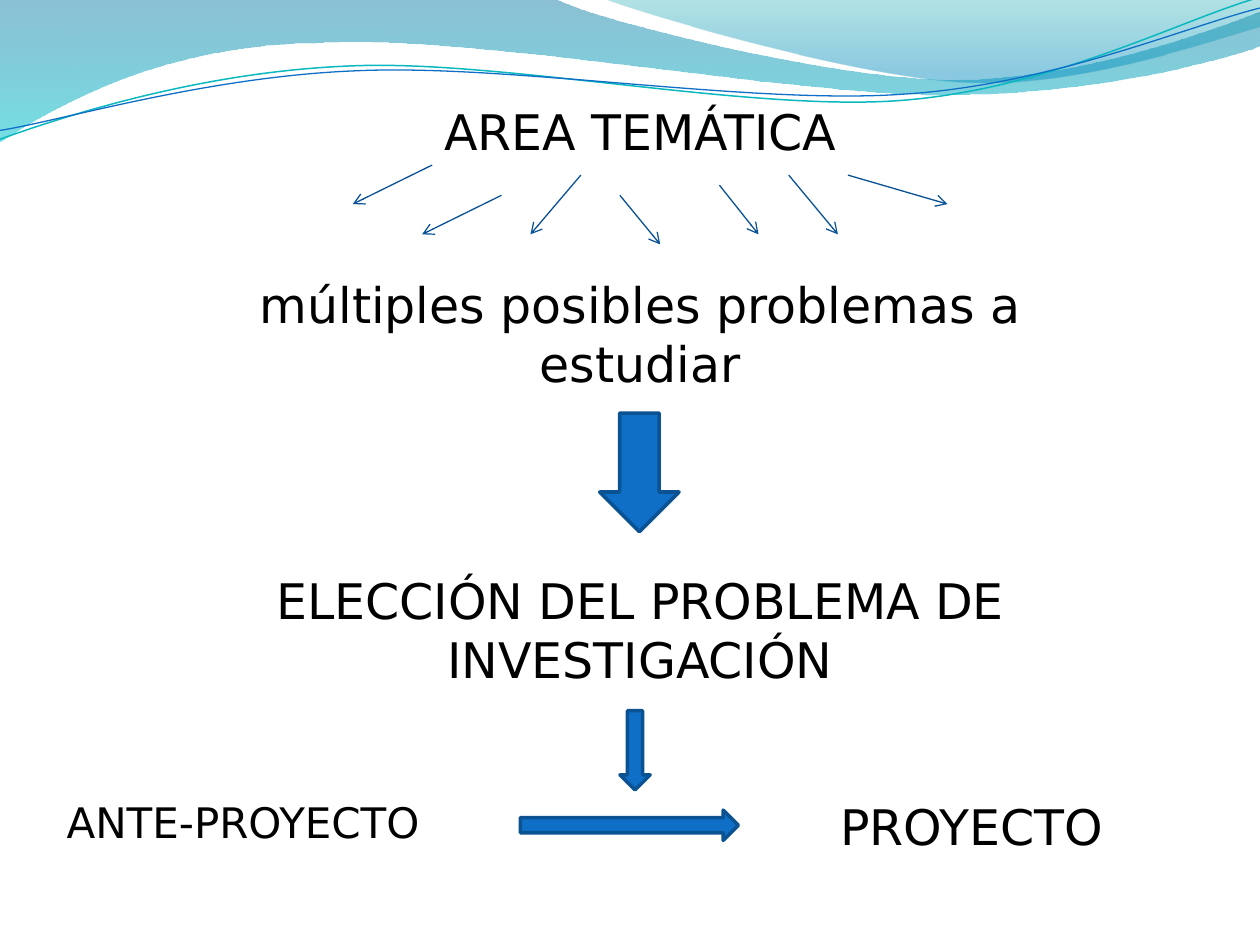
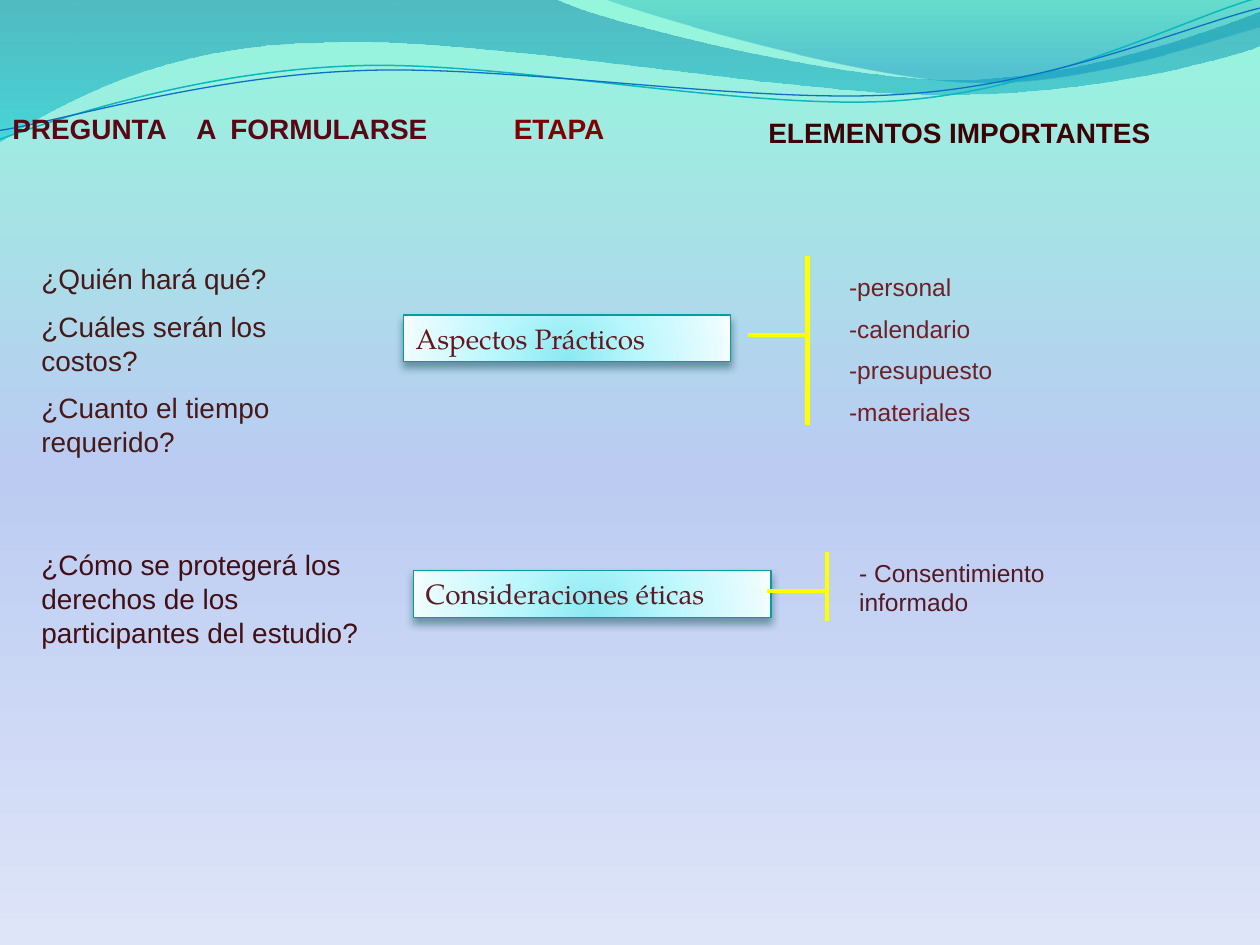
from dataclasses import dataclass

from pptx import Presentation, util as u
from pptx.dml.color import RGBColor
from pptx.enum import shapes, text
from pptx.oxml import parse_xml
from pptx.oxml.ns import nsdecls

Inches, Pt = u.Inches, u.Pt


@dataclass(frozen=True)
class Theme:
    """Fonts, type sizes, colours and gradients of the deck."""
    flow_font: str = "DejaVu Sans"
    body_font: str = "Arial"
    label_font: str = "TeX Gyre Pagella"
    large: int = 28
    medium: int = 24
    body: int = 16
    small: int = 14
    black: str = "000000"
    blue: str = "0F6FC6"
    teal: str = "0AB8BF"
    block_edge: str = "0B5292"
    thin_arrow: str = "095295"
    bracket: str = "FFFF00"
    label_edge: str = "069CA3"
    label_shadow: str = "024B4E"
    sky: tuple = ((0, "94F7DC", 100), (50, "BBCBF2", 100), (100, "DEE5F8", 100))
    glow: tuple = ((0, "8BE9F1", 100), (43, "B9F7FD", 100),
                   (93, "EAFCFE", 100), (100, "F8FEFF", 100))
    left_wave: tuple = ((0, "0074A1", 45), (100, "00C6CF", 55))
    right_wave: tuple = ((0, "00A1A9", 30), (80, "008BBF", 45))


THEME = Theme()
CURVE_TILT = -2.7
DOWNWARD = '<a:lin ang="5400000" scaled="0"/>'
FROM_BELOW = ('<a:path path="circle"><a:fillToRect l="50000" t="130000" '
              'r="50000" b="-30000"/></a:path>')

LEFT_WAVE = [
    [(0, -0.01)], [(4.4, -0.01)],
    [(4.76, 0.17), (6.64, 0.63), (7.58, 0.63)],
    [(8.53, 0.63), (9.58, 0.26), (10, 0.09)], [(10.01, 0.36)],
    [(9.83, 0.44), (8.7, 0.76), (7.46, 0.75)],
    [(6.22, 0.75), (3.82, 0.28), (2.57, 0.34)],
    [(1.29, 0.35), (0.46, 0.83), (-0.01, 1.13)]]
RIGHT_WAVE = [
    [(4.79, -0.01)],
    [(5.09, 0.11), (6.82, 0.62), (7.69, 0.65)],
    [(8.56, 0.69), (9.61, 0.32), (10, 0.21)], [(10, 0)]]
TEAL_CURVE = [
    [(-0.02, 0.87)],
    [(0.47, 0.72), (1.58, 0.41), (2.78, 0.42)],
    [(3.96, 0.42), (5.91, 0.93), (7.12, 0.9)],
    [(8.32, 0.87), (9.4, 0.36), (10, 0.22)]]
BLUE_CURVE = [
    [(-0.02, 0.8)],
    [(0.46, 0.75), (1.64, 0.45), (2.83, 0.46)],
    [(4.03, 0.46), (5.96, 0.88), (7.16, 0.85)],
    [(8.35, 0.83), (9.42, 0.42), (10.02, 0.3)]]


def rgb(value):
    """Turn a hex string into a colour."""
    return RGBColor.from_string(value)


def apply_gradient(holder, stops, direction):
    """Replace the first solid fill inside an element by a gradient."""
    marks = "".join(
        f'<a:gs pos="{place * 1000}"><a:srgbClr val="{colour}">'
        f'<a:alpha val="{opacity * 1000}"/></a:srgbClr></a:gs>'
        for place, colour, opacity in stops)
    gradient = parse_xml(f'<a:gradFill {nsdecls("a")} rotWithShape="1">'
                         f'<a:gsLst>{marks}</a:gsLst>{direction}</a:gradFill>')
    solid = holder.xpath(".//a:solidFill")[0]
    solid.getparent().replace(solid, gradient)


def set_line(shape, colour, width):
    """Give a shape or connector a plain outline."""
    shape.line.color.rgb = rgb(colour)
    shape.line.width = Pt(width)


def add_outline(page, segments, closed):
    """Draw a freeform whose three-point segments are cubic curves."""
    points = [(Inches(x), Inches(y)) for segment in segments for x, y in segment]
    builder = page.shapes.build_freeform(*points[0])
    builder.add_line_segments(points[1:], close=closed)
    outline = builder.convert_to_shape()
    outline.shadow.inherit = False
    corners = iter(outline.element.xpath(".//a:lnTo"))
    for segment in segments[1:]:
        first, *others = [next(corners) for _ in segment]
        if others:
            curve = parse_xml(f'<a:cubicBezTo {nsdecls("a")}/>')
            first.getparent().replace(first, curve)
            curve.append(first[0])
            for corner in others:
                curve.append(corner[0])
                corner.getparent().remove(corner)
    return outline


def add_waves(deck, page):
    """Draw the wave band and hand it to the slide master."""
    waves = []
    for segments, stops in ((LEFT_WAVE, THEME.left_wave),
                            (RIGHT_WAVE, THEME.right_wave)):
        wave = add_outline(page, segments, True)
        wave.fill.solid()
        apply_gradient(wave.element, stops, DOWNWARD)
        wave.line.fill.background()
        waves.append(wave)
    for segments, colour, width in ((TEAL_CURVE, THEME.teal, 0.85),
                                    (BLUE_CURVE, THEME.blue, 0.75)):
        curve = add_outline(page, segments, False)
        curve.rotation = CURVE_TILT
        curve.fill.background()
        set_line(curve, colour, width)
        waves.append(curve)
    tree = deck.slide_master.shapes.element
    for index, wave in enumerate(waves):
        wave.element.xpath("./p:nvSpPr/p:cNvPr")[0].set("id", str(100 + index))
        tree.insert(2 + index, wave.element)


def write(box, lines, font, size, colour, bold=False, align=text.PP_ALIGN.LEFT, gaps=()):
    """Fill a shape with equally styled paragraphs and given gaps above them."""
    frame = box.text_frame
    frame.word_wrap = True
    frame.auto_size = text.MSO_AUTO_SIZE.SHAPE_TO_FIT_TEXT
    frame.vertical_anchor = text.MSO_ANCHOR.TOP
    frame.text = "\n".join(lines)
    for para in frame.paragraphs:
        para.alignment = align
        for span in para.runs:
            span.font.name = font
            span.font.size = Pt(size)
            span.font.bold = bold
            span.font.color.rgb = rgb(colour)
    for para, gap in zip(frame.paragraphs, gaps):
        para.space_before = Pt(gap)


def add_text(page, area, lines, font, size, colour, **style):
    """Add a wrapped text box."""
    box = page.shapes.add_textbox(*map(Inches, area))
    write(box, lines, font, size, colour, **style)
    return box


def add_rule(page, start, end, colour, width, arrow=False):
    """Add a straight line, with an open arrowhead if asked."""
    rule = page.shapes.add_connector(
        shapes.MSO_CONNECTOR.STRAIGHT, *map(Inches, (*start, *end)))
    set_line(rule, colour, width)
    if arrow:
        rule.element.xpath("./p:spPr/a:ln")[0].append(
            parse_xml(f'<a:tailEnd {nsdecls("a")} type="arrow"/>'))
    rule.element.spPr.append(parse_xml(f'<a:effectLst {nsdecls("a")}/>'))


def add_block_arrow(page, kind, area):
    """Add a filled block arrow."""
    arrow = page.shapes.add_shape(kind, *map(Inches, area))
    arrow.shadow.inherit = False
    arrow.fill.solid()
    arrow.fill.fore_color.rgb = rgb(THEME.blue)
    set_line(arrow, THEME.block_edge, 2)


def add_stage_label(page, area, label, colour):
    """Add a glowing label with a soft shadow."""
    box = page.shapes.add_shape(shapes.MSO_SHAPE.RECTANGLE, *map(Inches, area))
    box.fill.solid()
    apply_gradient(box.element, THEME.glow, FROM_BELOW)
    set_line(box, THEME.label_edge, 0.75)
    box.shadow.inherit = False
    box.element.xpath("./p:spPr/a:effectLst")[0].append(parse_xml(
        f'<a:outerShdw {nsdecls("a")} blurRad="{Pt(4.5)}" dist="{Pt(3)}" '
        f'dir="5400000" rotWithShape="0"><a:srgbClr val="{THEME.label_shadow}">'
        '<a:alpha val="48000"/></a:srgbClr></a:outerShdw>'))
    write(box, [label], THEME.label_font, THEME.body, colour)


def add_bracket(page, left, spine, middle, top, bottom, width):
    """Add a stem that meets an upright spine."""
    add_rule(page, (left, middle), (spine, middle), THEME.bracket, width)
    add_rule(page, (spine, top), (spine, bottom), THEME.bracket, width)


def add_heading(page, area, line, colour, indent=0, tabs=()):
    """Add a bold column heading with an indent and tab stops."""
    box = add_text(page, area, [line], THEME.body_font, THEME.body, colour, bold=True)
    layout = box.element.xpath(".//a:pPr")[0]
    layout.set("marL", str(Inches(indent)))
    if tabs:
        stops = "".join(f'<a:tab pos="{Inches(stop)}" algn="l"/>' for stop in tabs)
        layout.append(parse_xml(f'<a:tabLst {nsdecls("a")}>{stops}</a:tabLst>'))


def build_flow(page):
    """Show the way from the subject area to the project."""
    flow = dict(font=THEME.flow_font, size=THEME.large, colour=THEME.black)
    add_text(page, (1.38, 0.76, 7.4, 4.78),
             ["AREA TEMÁTICA", "múltiples posibles problemas a estudiar",
              "ELECCIÓN DEL PROBLEMA DE INVESTIGACIÓN"],
             align=text.PP_ALIGN.CENTER, gaps=(0, 65, 102), **flow)
    add_text(page, (0.43, 6.27, 3.31, 0.5), ["ANTE-PROYECTO"],
             THEME.flow_font, THEME.medium, THEME.black)

    for start, end in (((4.61, 1.39), (4.21, 1.86)), ((4.92, 1.55), (5.24, 1.94)),
                       ((5.71, 1.47), (6.02, 1.86)), ((6.26, 1.39), (6.65, 1.86)),
                       ((3.43, 1.31), (2.8, 1.62)), ((3.98, 1.55), (3.35, 1.86)),
                       ((6.73, 1.39), (7.52, 1.62))):
        add_rule(page, start, end, THEME.thin_arrow, 0.75, arrow=True)
    down, right = shapes.MSO_SHAPE.DOWN_ARROW, shapes.MSO_SHAPE.RIGHT_ARROW
    add_block_arrow(page, down, (4.76, 3.28, 0.63, 0.94))
    add_block_arrow(page, right, (4.13, 6.43, 1.73, 0.24))
    add_text(page, (6.57, 6.27, 2.76, 0.57), ["PROYECTO"], **flow)
    add_block_arrow(page, down, (4.92, 5.64, 0.24, 0.63))


def add_list(page, area, lines, size, colour):
    """Add paragraphs set half a line apart."""
    add_text(page, area, lines, THEME.body_font, size, colour,
             gaps=[size / 2] * len(lines))


def build_stages(page):
    """Show questions, stages and their key elements."""
    page.background.fill.solid()
    apply_gradient(page.element, THEME.sky, DOWNWARD)
    add_list(page, (0.23, 2.03, 2.8, 1.72),
             ["¿Quién hará qué?", "¿Cuáles serán los costos?",
              "¿Cuanto el tiempo requerido?"], THEME.body, "471919")
    add_heading(page, (0, 0.84, 3.58, 0.37), "PREGUNTA\tA\tFORMULARSE", "5A0614",
                tabs=(1.46, 1.73))
    add_heading(page, (3.43, 0.84, 2.28, 0.37), "ETAPA", "800000", indent=0.55)
    add_heading(page, (5.79, 0.87, 4.21, 0.37), "ELEMENTOS IMPORTANTES", "3B0304",
                indent=0.21)

    add_stage_label(page, (3.2, 2.5, 2.6, 0.37), "Aspectos Prácticos", "63171E")
    add_bracket(page, 5.94, 6.41, 2.66, 2.03, 3.37, 2.5)
    add_list(page, (6.64, 2.11, 2.61, 1.4),
             ["-personal", "-calendario", "-presupuesto", "-materiales"],
             THEME.small, "6E2026")

    add_list(page, (0.23, 4.3, 2.8, 0.91),
             ["¿Cómo se protegerá los derechos de los participantes del estudio?"],
             THEME.body, "410F14")
    add_stage_label(page, (3.28, 4.53, 2.84, 0.37), "Consideraciones éticas", "5A1C25")
    add_bracket(page, 6.09, 6.56, 4.69, 4.38, 4.93, 2.25)
    add_list(page, (6.72, 4.38, 2.14, 0.57), ["- Consentimiento informado"],
             THEME.small, "561821")


def main():
    """Build and save the deck."""
    deck = Presentation()
    deck.slide_width, deck.slide_height = Inches(10), Inches(7.5)
    blank = deck.slide_layouts[6]
    flow_page, stages_page = (deck.slides.add_slide(blank) for _ in range(2))
    add_waves(deck, flow_page)
    build_flow(flow_page)
    build_stages(stages_page)
    deck.save("out.pptx")


if __name__ == "__main__":
    main()
